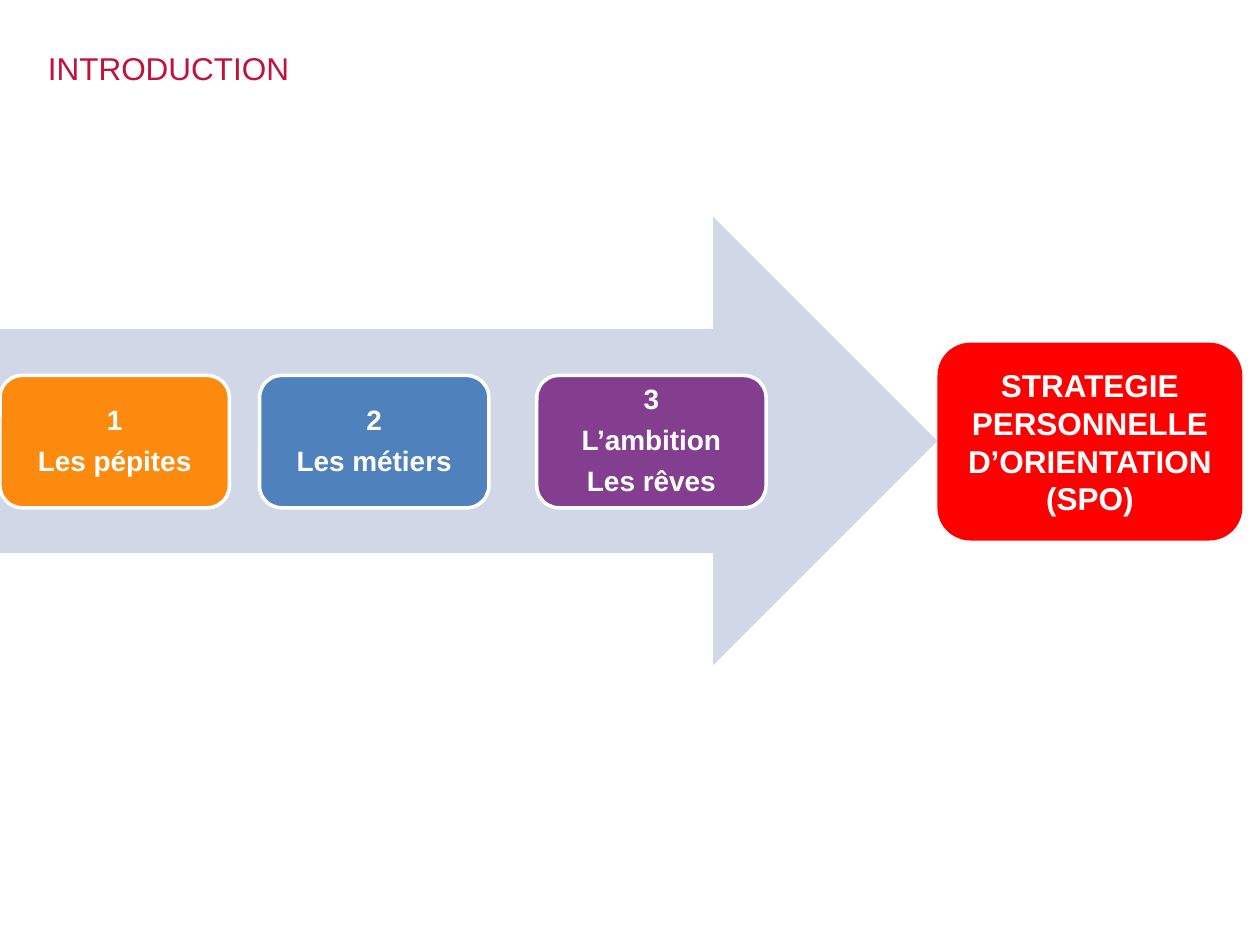
"""Build the introduction slide: three steps leading to a personal strategy."""
from dataclasses import dataclass

from pptx import Presentation
from pptx.dml.color import RGBColor
from pptx.enum import shapes, text
from pptx.util import Inches, Pt


@dataclass(frozen=True)
class Theme:
    """Colours, font and type sizes of the slide."""
    font: str = "Arial"
    title: str = "C2113A"
    arrow: str = "D0D8E8"
    white: str = "FFFFFF"
    orange: str = "FC8A0E"
    blue: str = "4F81BD"
    purple: str = "833E90"
    red: str = "FF0000"
    large: int = 18
    medium: int = 16


@dataclass(frozen=True)
class Card:
    """A rounded box with its centred lines of text."""
    left: float
    fill: str
    lines: tuple[str, ...]
    top: float = 2.98
    width: float = 1.82
    height: float = 1.05
    size: int = Theme.medium
    inset: float = 0.07
    outlined: bool = True
    spacing: float = 0.9
    after: int = 6


THEME = Theme()
CARDS = (
    Card(0, THEME.orange, ("1", "Les pépites")),
    Card(2.06, THEME.blue, ("2", "Les métiers")),
    Card(4.26, THEME.purple, ("3", "L’ambition", "Les rêves")),
    Card(7.44, THEME.red, ("STRATEGIE PERSONNELLE D’ORIENTATION (SPO)",),
         top=2.72, width=2.42, height=1.57, size=THEME.large, inset=0.1,
         outlined=False, spacing=1.0, after=0),
)


def apply(obj, values: dict) -> None:
    """Set each named attribute on the object."""
    for name, value in values.items():
        setattr(obj, name, value)


def style_font(font, size: int, color: str, bold: bool) -> None:
    """Format a font in the theme typeface."""
    apply(font, {"name": THEME.font, "size": Pt(size), "bold": bold})
    font.color.rgb = RGBColor.from_string(color)


def add_filled(slide, kind, box: tuple[float, ...], fill: str):
    """Add a flat preset shape without outline."""
    sp = slide.shapes.add_shape(kind, *map(Inches, box))
    sp.shadow.inherit = False
    sp.fill.solid()
    sp.fill.fore_color.rgb = RGBColor.from_string(fill)
    sp.line.fill.background()
    return sp


def add_card(slide, card: Card) -> None:
    """Draw one rounded card and its text."""
    box = (card.left, card.top, card.width, card.height)
    sp = add_filled(slide, shapes.MSO_SHAPE.ROUNDED_RECTANGLE, box, card.fill)
    if card.outlined:
        sp.line.color.rgb = RGBColor.from_string(THEME.white)
        sp.line.width = Pt(2)
    tf = sp.text_frame
    inset = Inches(card.inset)
    apply(tf, {"word_wrap": True, "vertical_anchor": text.MSO_ANCHOR.MIDDLE,
               "margin_left": inset, "margin_right": inset,
               "margin_top": inset, "margin_bottom": inset})
    for i, line in enumerate(card.lines):
        p = tf.add_paragraph() if i else tf.paragraphs[0]
        apply(p, {"alignment": text.PP_ALIGN.CENTER,
                  "line_spacing": card.spacing, "space_after": Pt(card.after)})
        r = p.add_run()
        r.text = line
        style_font(r.font, card.size, THEME.white, True)


def add_title(slide, words: str) -> None:
    """Place and format the title placeholder."""
    sp = slide.shapes.title
    apply(sp, {"left": Inches(0.28), "top": Inches(0.34),
               "width": Inches(8.03), "height": Inches(0.71)})
    tf = sp.text_frame
    apply(tf, {"word_wrap": True, "vertical_anchor": text.MSO_ANCHOR.TOP})
    p = tf.paragraphs[0]
    p.alignment = text.PP_ALIGN.LEFT
    r = p.add_run()
    r.text = words
    style_font(r.font, THEME.large, THEME.title, False)


def main() -> None:
    """Build and save the presentation."""
    prs = Presentation()
    apply(prs, {"slide_width": Inches(10), "slide_height": Inches(7.5)})
    s = prs.slides.add_slide(prs.slide_layouts[5])
    add_title(s, "INTRODUCTION")
    add_filled(s, shapes.MSO_SHAPE.RIGHT_ARROW, (0, 1.72, 7.44, 3.56), THEME.arrow)
    for card in CARDS:
        add_card(s, card)
    prs.save("out.pptx")


if __name__ == "__main__":
    main()
